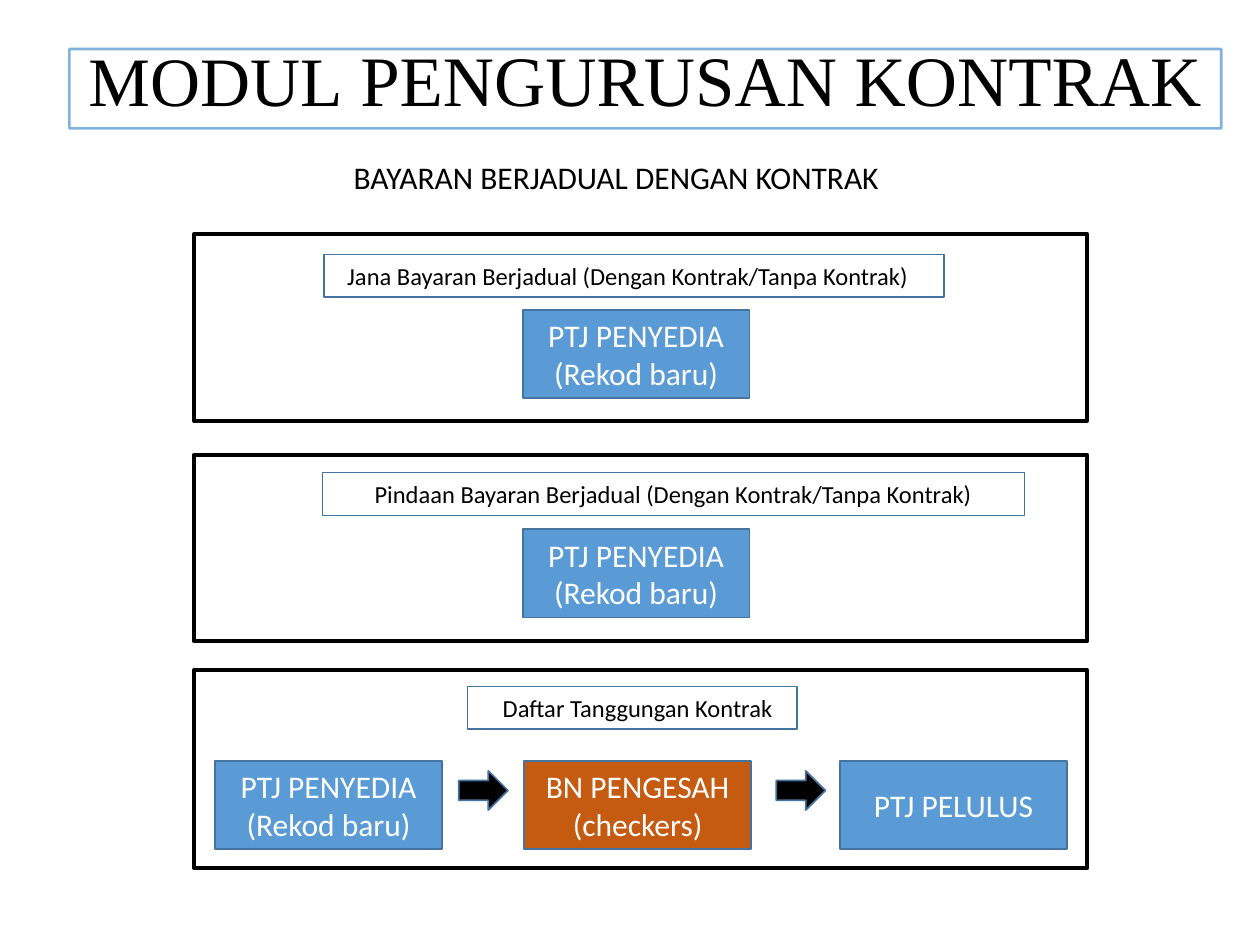
"""Build the contract management slide with its three payment workflows."""
from dataclasses import dataclass

from lxml import etree
from pptx import Presentation
from pptx.dml.color import RGBColor
from pptx.enum.shapes import MSO_SHAPE
from pptx.enum.text import MSO_ANCHOR, MSO_AUTO_SIZE, PP_ALIGN
from pptx.oxml.ns import qn
from pptx.util import Cm, Pt

RECTANGLE, ARROW = MSO_SHAPE.RECTANGLE, MSO_SHAPE.RIGHT_ARROW
LEFT, CENTER = PP_ALIGN.LEFT, PP_ALIGN.CENTER
TOP, MIDDLE, BOTTOM = MSO_ANCHOR.TOP, MSO_ANCHOR.MIDDLE, MSO_ANCHOR.BOTTOM
GROW = MSO_AUTO_SIZE.SHAPE_TO_FIT_TEXT
BLUE, ORANGE, EDGE = "5B9BD5", "C55A11", "43739E"
BLACK, WHITE = "000000", "FFFFFF"
BODY_FONT, TITLE_FONT = "Calibri", "Times New Roman"
INSET = 0.25
PREPARER = "PTJ PENYEDIA\n(Rekod baru)"


@dataclass
class Box:
    left: float
    top: float
    width: float
    height: float


@dataclass
class Caption:
    text: str
    box: Box
    align: PP_ALIGN = CENTER
    indent: float = 0


@dataclass
class Step:
    text: str
    left: float
    fill: str = BLUE


@dataclass
class Workflow:
    frame: Box
    caption: Caption
    steps_top: float
    steps: list[Step]
    arrow_lefts: tuple[float, ...] = ()


WORKFLOWS = [
    Workflow(
        Box(3.91, 4.72, 18.01, 3.76),
        Caption("Jana Bayaran Berjadual (Dengan Kontrak/Tanpa Kontrak)",
                Box(6.53, 5.13, 12.5, 0.86), LEFT, 0.22),
        6.25, [Step(PREPARER, 10.54)]),
    Workflow(
        Box(3.91, 9.17, 18.01, 3.76),
        Caption("Pindaan Bayaran Berjadual (Dengan Kontrak/Tanpa Kontrak)",
                Box(6.5, 9.53, 14.15, 0.86)),
        10.67, [Step(PREPARER, 10.54)]),
    Workflow(
        Box(3.91, 13.51, 18.01, 3.99),
        Caption("Daftar Tanggungan Kontrak", Box(9.42, 13.84, 6.65, 0.86), CENTER, 0.22),
        15.34,
        [Step(PREPARER, 4.34), Step("BN PENGESAH\n(checkers)", 10.57, ORANGE),
         Step("PTJ PELULUS", 16.94)],
        (9.25, 15.65)),
]


def color(hex_code: str) -> RGBColor:
    """Turn a hex string into a colour."""
    return RGBColor.from_string(hex_code)


def place(box: Box) -> tuple[Cm, Cm, Cm, Cm]:
    """Give a box as slide lengths."""
    return Cm(box.left), Cm(box.top), Cm(box.width), Cm(box.height)


def add_block(slide, kind: MSO_SHAPE, box: Box, line: str, weight: float, fill: str = ""):
    """Add an outlined shape, filled only when a fill is given."""
    block = slide.shapes.add_shape(kind, *place(box))
    block.shadow.inherit = False
    if fill:
        block.fill.solid()
        block.fill.fore_color.rgb = color(fill)
    else:
        block.fill.background()
    block.line.color.rgb = color(line)
    block.line.width = Pt(weight)
    return block


def style_run(run, size: float, ink: str, font: str) -> None:
    """Set the font, size and colour of a run."""
    run.font.name = font
    run.font.size = Pt(size)
    run.font.color.rgb = color(ink)


def write(shape, text: str, size: float, ink: str = BLACK, align: PP_ALIGN = CENTER,
          anchor: MSO_ANCHOR = TOP, font: str = BODY_FONT) -> None:
    """Set the text of a shape and format every run."""
    frame = shape.text_frame
    frame.text = text
    frame.word_wrap = True
    frame.vertical_anchor = anchor
    for paragraph in frame.paragraphs:
        paragraph.alignment = align
        for run in paragraph.runs:
            style_run(run, size, ink, font)


def add_title(slide) -> None:
    """Add the framed title with its slightly larger second part."""
    title = add_block(slide, RECTANGLE, Box(1.4, 0.99, 23.22, 1.6), BLUE, 1.5)
    line_color = title.element.find(f".//{qn('a:ln')}//{qn('a:srgbClr')}")
    etree.SubElement(line_color, qn("a:alpha"), val="76000")
    write(title, "MODUL", 39.6, anchor=BOTTOM, font=TITLE_FONT)
    heading = title.text_frame.paragraphs[0]
    heading.line_spacing = 0.9
    ending = heading.add_run()
    ending.text = " PENGURUSAN KONTRAK"
    style_run(ending, 40.5, BLACK, TITLE_FONT)


def add_subtitle(slide) -> None:
    """Add the line under the title."""
    subtitle = slide.shapes.add_textbox(*place(Box(6.88, 3.07, 11.43, 1.02)))
    write(subtitle, "BAYARAN BERJADUAL DENGAN KONTRAK", 18, align=LEFT)
    subtitle.text_frame.auto_size = GROW


def add_caption(slide, caption: Caption) -> None:
    """Add the outlined heading of a workflow."""
    heading = add_block(slide, RECTANGLE, caption.box, EDGE, 0.75)
    write(heading, caption.text, 14, align=caption.align)
    heading.text_frame.margin_left = Cm(INSET + caption.indent)
    heading.text_frame.auto_size = GROW


def add_workflow(slide, workflow: Workflow) -> None:
    """Add a frame with its heading, steps and arrows."""
    add_block(slide, RECTANGLE, workflow.frame, BLACK, 2.25)
    add_caption(slide, workflow.caption)
    for step in workflow.steps:
        box = Box(step.left, workflow.steps_top, 4.57, 1.78)
        block = add_block(slide, RECTANGLE, box, EDGE, 1, step.fill)
        write(block, step.text, 18, WHITE, anchor=MIDDLE)
    for left in workflow.arrow_lefts:
        add_block(slide, ARROW, Box(left, workflow.steps_top + 0.2, 0.99, 0.79), EDGE, 1, BLACK)


def main() -> None:
    """Build and save the slide."""
    presentation = Presentation()
    presentation.slide_width, presentation.slide_height = Cm(25.4), Cm(19.05)
    slide = presentation.slides.add_slide(presentation.slide_layouts[6])
    add_title(slide)
    add_subtitle(slide)
    for workflow in WORKFLOWS:
        add_workflow(slide, workflow)
    presentation.save("out.pptx")


if __name__ == "__main__":
    main()
